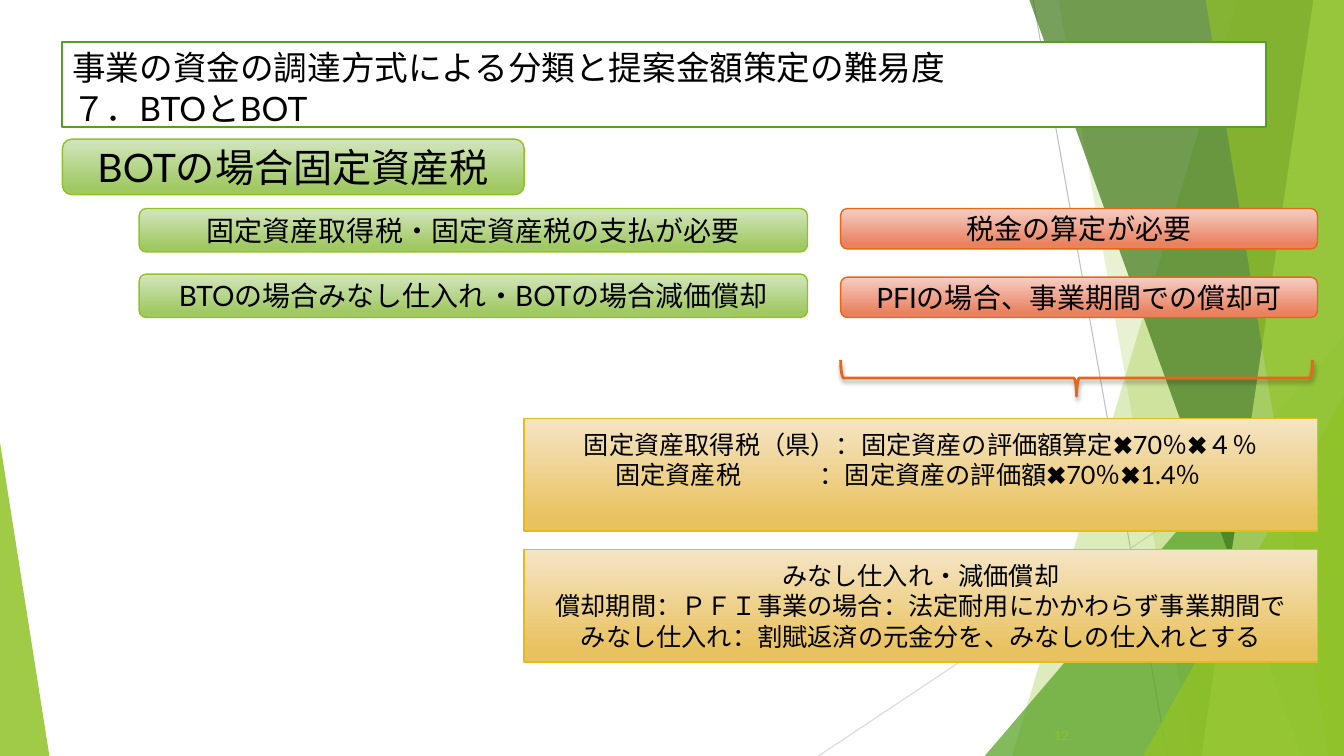
"""Build the slide on fixed asset tax under BTO and BOT schemes."""
from lxml import etree
from pptx import Presentation
from pptx import util as u
from pptx.dml.color import RGBColor
from pptx.enum import shapes, text
from pptx.oxml.ns import qn

WIDTH, HEIGHT = 960, 540
FONT = "Lato"
GREEN = ("D3E5BE", "A0C962", "90C226")
RED = ("F5CEC5", "EA815F", "E76618")
GOLD = ("F5E5C5", "E9C260", "E6B91E")
CENTRED = {"alignment": text.PP_ALIGN.CENTER}
LEFT = {"alignment": text.PP_ALIGN.LEFT}
RIGHT = {"alignment": text.PP_ALIGN.RIGHT}
MIDDLE = {"vertical_anchor": text.MSO_ANCHOR.MIDDLE, "word_wrap": True}
TOP = {"vertical_anchor": text.MSO_ANCHOR.TOP, "word_wrap": True}


def rgb(colour):
    """Turn a hex string into a colour."""
    return RGBColor.from_string(colour)


def apply(target, values):
    """Set every attribute in a dict of format values."""
    for name, value in values.items():
        setattr(target, name, value)


def fill_solid(shape, colour, opacity=100):
    """Fill a shape with one colour at an opacity in percent."""
    shape.fill.solid()
    shape.fill.fore_color.rgb = rgb(colour)
    if opacity < 100:
        node = next(shape._element.spPr.iter(qn("a:srgbClr")))
        etree.SubElement(node, qn("a:alpha"), val=str(opacity * 1000))


def fill_gradient(shape, top, bottom):
    """Fill a shape with a downward gradient."""
    shape.fill.gradient()
    shape.fill.gradient_angle = 270
    for stop, position, colour in zip(shape.fill.gradient_stops, (0, 0.88), (top, bottom)):
        stop.position = position
        stop.color.rgb = rgb(colour)


def outline(shape, colour, width):
    """Draw the line of a shape."""
    shape.line.color.rgb = rgb(colour)
    shape.line.width = u.Pt(width)


def add_preset(slide, kind, box):
    """Add a preset shape without a shadow."""
    shape = slide.shapes.add_shape(kind, *map(u.Pt, box))
    shape.shadow.inherit = False
    return shape


def write(shape, lines, size, paragraph_format, frame_format, colour="000000"):
    """Write one paragraph per line."""
    frame = shape.text_frame
    apply(frame, frame_format)
    frame.text = "\n".join(lines)
    for paragraph in frame.paragraphs:
        apply(paragraph, paragraph_format)
        for run in paragraph.runs:
            apply(run.font, {"size": u.Pt(size), "name": FONT})
            run.font.color.rgb = rgb(colour)
            etree.SubElement(run.font._element, qn("a:ea"), typeface=FONT)


def add_hairline(slide, start, end, colour):
    """Add a thin background line."""
    line = slide.shapes.add_connector(shapes.MSO_CONNECTOR.STRAIGHT, *map(u.Pt, start + end))
    outline(line, colour, 0.75)
    etree.SubElement(line._element.spPr, qn("a:effectLst"))


def add_band(slide, top_x, bottom_x, colour, opacity):
    """Add a band from a slanted left edge to the right side of the slide."""
    corners = [(top_x, -0.6), (WIDTH, -0.6), (WIDTH, HEIGHT), (bottom_x, HEIGHT)]
    points = [(u.Pt(x), u.Pt(y)) for x, y in corners]
    builder = slide.shapes.build_freeform(*points[0], scale=1.0)
    builder.add_line_segments(points[1:], close=True)
    band = builder.convert_to_shape()
    band.shadow.inherit = False
    fill_solid(band, colour, opacity)
    band.line.fill.background()


def add_wedge(slide, left, top, width, apex, colour, opacity):
    """Add a right triangle standing on the bottom of the slide."""
    wedge = add_preset(slide, shapes.MSO_SHAPE.ISOSCELES_TRIANGLE,
                       (left, top, width, HEIGHT - top))
    wedge.adjustments[0] = apex
    fill_solid(wedge, colour, opacity)
    wedge.line.fill.background()


def add_backdrop(slide):
    """Add the green facets behind the content."""
    add_hairline(slide, (738, 0), (833.8, HEIGHT), "BFBFBF")
    add_hairline(slide, (WIDTH, 290.2), (584.6, HEIGHT), "D9D9D9")
    add_band(slide, 884.2, 722.9, "90C226", 30)
    add_band(slide, 756, 851.8, "90C226", 20)
    add_wedge(slide, 703.4, 239.8, 256.6, 1, "54A021", 72)
    add_band(slide, 735.1, 929.5, "3F7819", 70)
    add_band(slide, 938.2, 858.2, "C0E474", 70)
    add_band(slide, 861.1, 949, "90C226", 65)
    add_wedge(slide, 816.5, 283, 143.5, 1, "90C226", 80)
    add_wedge(slide, 0, 316.1, 35.3, 0, "90C226", 85)


def add_title(slide, title):
    """Add the framed title."""
    frame = add_preset(slide, shapes.MSO_SHAPE.RECTANGLE, (44.6, 30.2, 859.7, 60.5))
    fill_solid(frame, "FFFFFF")
    outline(frame, "54A021", 1.5)
    write(frame, [title], 24, LEFT, TOP)


def add_box(slide, kind, box, palette, lines, size):
    """Add a gradient box with centred text."""
    top, bottom, edge = palette
    shape = add_preset(slide, kind, box)
    fill_gradient(shape, top, bottom)
    outline(shape, edge, 1)
    write(shape, lines, size, CENTRED, MIDDLE)
    return shape


def add_pill(slide, box, palette, label, size=20):
    """Add a rounded label."""
    add_box(slide, shapes.MSO_SHAPE.ROUNDED_RECTANGLE, box, palette, [label], size)


def add_note(slide, top, lines):
    """Add a gold note under the brace."""
    return add_box(slide, shapes.MSO_SHAPE.RECTANGLE, (374.4, top, 566.6, 80.6), GOLD, lines, 18)


def align_colon(paragraph, start, colon):
    """Start a line at one indent and put its tabbed part at another."""
    paragraph.alignment = text.PP_ALIGN.LEFT
    properties = paragraph._p.get_or_add_pPr()
    properties.set("marL", str(u.Pt(colon)))
    properties.set("indent", str(u.Pt(start - colon)))


def add_brace(slide):
    """Add the downward brace with a soft shadow."""
    brace = add_preset(slide, shapes.MSO_SHAPE.RIGHT_BRACE, (756, 101.5, 25.9, 337))
    brace.rotation = 90
    brace.fill.background()
    outline(brace, RED[2], 2)
    effects = brace._element.spPr.find(qn("a:effectLst"))
    shadow = etree.SubElement(effects, qn("a:outerShdw"), blurRad=str(u.Pt(3)),
                              dist=str(u.Pt(2)), dir="5400000", rotWithShape="0")
    colour = etree.SubElement(shadow, qn("a:srgbClr"), val="000000")
    etree.SubElement(colour, qn("a:alpha"), val="35000")


def add_page_number(slide, number):
    """Add the page number."""
    box = slide.shapes.add_textbox(*map(u.Pt, (720, 512, 50.5, 26)))
    write(box, [number], 9, RIGHT, MIDDLE, "90C226")


def main():
    """Build and save the slide."""
    presentation = Presentation()
    apply(presentation, {"slide_width": u.Pt(WIDTH), "slide_height": u.Pt(HEIGHT)})
    slide = presentation.slides.add_slide(presentation.slide_layouts[6])
    add_backdrop(slide)
    add_title(slide, "事業の資金の調達方式による分類と提案金額策定の難易度\v７．BTOとBOT")
    add_pill(slide, (44.6, 99.4, 329.8, 39.6), GREEN, "BOTの場合固定資産税", 28)
    rows = [
        (149, 149, "固定資産取得税・固定資産税の支払が必要", "税金の算定が必要"),
        (195.8, 198, "BTOの場合みなし仕入れ・BOTの場合減価償却", "PFIの場合、事業期間での償却可"),
    ]
    for topic_top, remark_top, topic, remark in rows:
        add_pill(slide, (99.4, topic_top, 477.4, 31), GREEN, topic)
        add_pill(slide, (600.5, remark_top, 340.6, 28.8), RED, remark)
    add_brace(slide)
    rates = add_note(slide, 298.8, [
        "固定資産取得税（県）：固定資産の評価額算定✖70％✖４％",
        "固定資産税\t：固定資産の評価額✖70％✖1.4％",
    ])
    rates.text_frame.margin_bottom = u.Pt(25.2)
    align_colon(rates.text_frame.paragraphs[1], 58, 204)
    add_note(slide, 392.4, [
        "みなし仕入れ・減価償却",
        "償却期間：ＰＦＩ事業の場合：法定耐用にかかわらず事業期間で",
        "みなし仕入れ：割賦返済の元金分を、みなしの仕入れとする",
    ])
    add_page_number(slide, "12")
    presentation.save("out.pptx")


if __name__ == "__main__":
    main()
